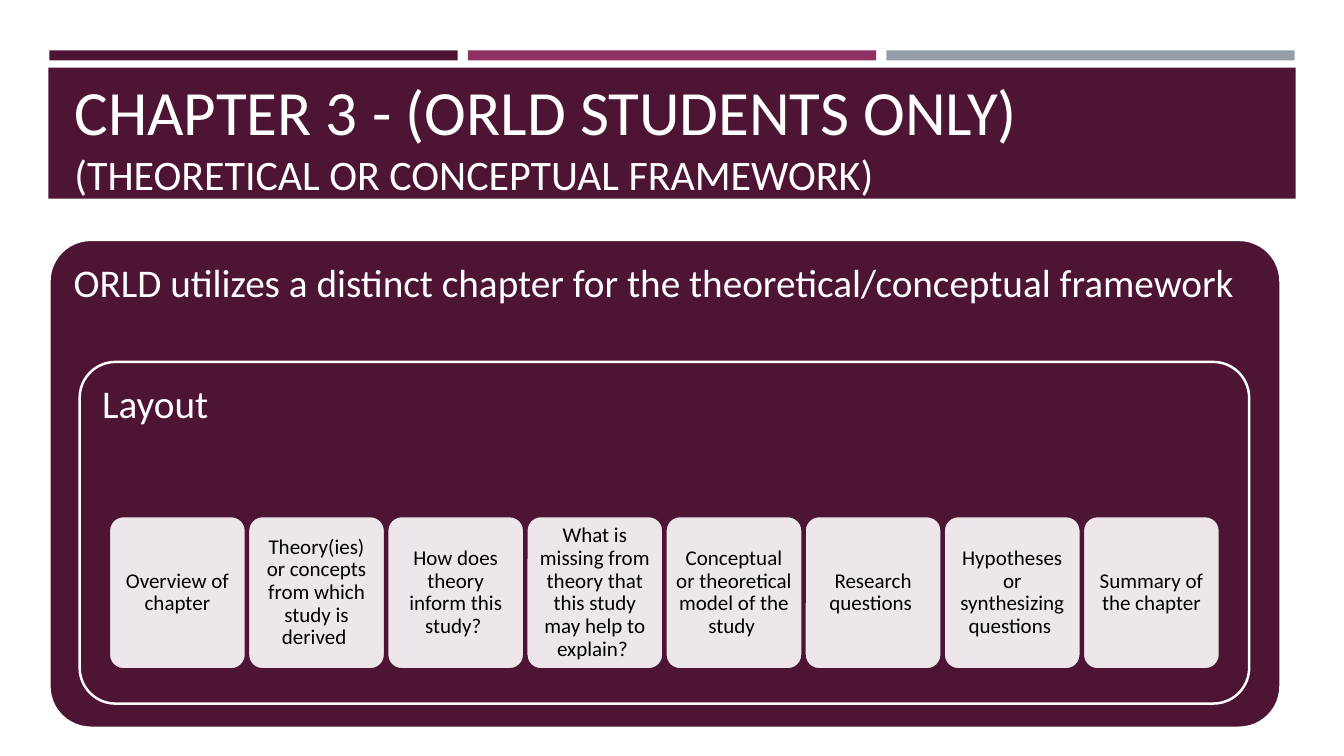
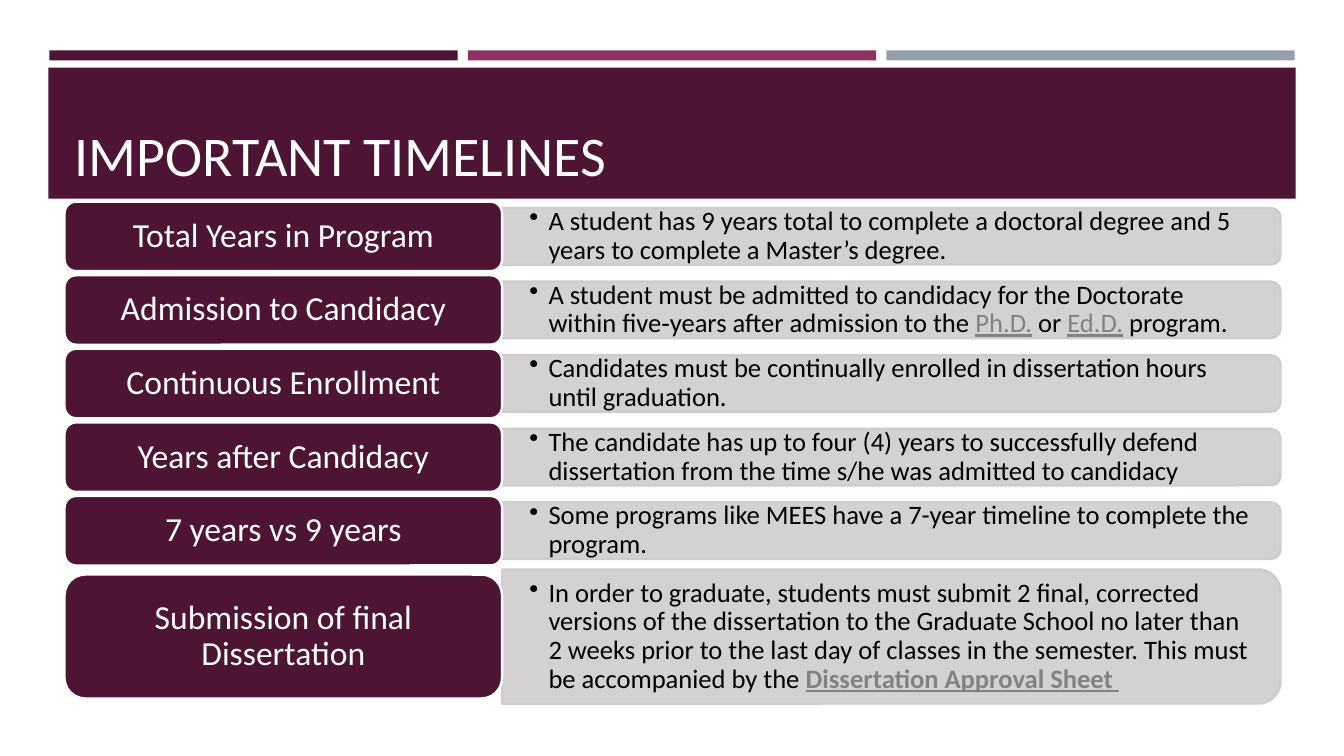
from lxml.etree import SubElement
from pptx import Presentation
from pptx.dml.color import RGBColor
from pptx.enum.shapes import MSO_SHAPE
from pptx.enum.text import MSO_ANCHOR, PP_ALIGN
from pptx.oxml.ns import qn
from pptx.util import Inches, Pt

PLUM = RGBColor(0x4D, 0x14, 0x34)
MAGENTA = RGBColor(0x90, 0x31, 0x63)
SLATE = RGBColor(0x96, 0x9F, 0xA7)
STRIP_GRAY = RGBColor(0xD0, 0xCC, 0xCE)
LINK_GRAY = RGBColor(0x82, 0x82, 0x82)
WHITE = RGBColor(0xFF, 0xFF, 0xFF)
BLACK = RGBColor(0x00, 0x00, 0x00)

LINK = {"color": LINK_GRAY, "underline": True}
BOLD_LINK = {**LINK, "bold": True}

LAYOUT_PARTS = [
    "Overview of chapter",
    "Theory(ies) or concepts from which study is derived ",
    "How does theory inform this study? ",
    "What is missing from theory that this study may help to explain? ",
    "Conceptual or theoretical model of the study ",
    "Research questions ",
    "Hypotheses or synthesizing questions ",
    "Summary of the chapter",
]

TIMELINES = [
    ("Total Years in Program", 0.69, 0.56, [
        ("A student has 9 years total to complete a doctoral degree and 5 years "
         "to complete a Master’s degree.", {})]),
    ("Admission to Candidacy", 0.69, 0.56, [
        ("A student must be admitted to candidacy for the Doctorate within "
         "five‐years after admission to the ", {}),
        ("Ph.D.", LINK), (" or ", {}), ("Ed.D.", LINK), (" program.", {})]),
    ("Continuous Enrollment", 0.69, 0.56, [
        ("Candidates must be continually enrolled in dissertation hours until "
         "graduation.", {})]),
    ("Years after Candidacy", 0.69, 0.56, [
        ("The candidate has up to four (4) years to successfully defend "
         "dissertation from the time s/he was admitted to candidacy", {})]),
    ("7 years vs 9 years", 0.69, 0.56, [
        ("Some programs like MEES have a 7-year timeline to complete the "
         "program.", {})]),
    ("Submission of final Dissertation", 1.23, 1.33, [
        ("In order to graduate, students must submit 2 final, corrected versions "
         "of the dissertation to the Graduate School no later than 2 weeks prior "
         "to the last day of classes in the semester. This must be accompanied "
         "by the ", {}),
        ("Dissertation Approval Sheet ", BOLD_LINK)]),
]


class Deck:
    """Holds the presentation, its style and the slide being built."""

    font_name = "Calibri"
    line_width = Pt(1.75)

    def __init__(self):
        self.presentation = Presentation()
        self.presentation.slide_width = Inches(13.33)
        self.presentation.slide_height = Inches(7.5)
        self.slide = None

    def start_slide(self, *title_lines):
        layout = self.presentation.slide_layouts[6]
        self.slide = self.presentation.slides.add_slide(layout)
        for index, color in enumerate((PLUM, MAGENTA, SLATE)):
            self.shape(MSO_SHAPE.RECTANGLE, (0.49 + 4.15 * index, 0.5, 4.05, 0.1), color)
        self.shape(MSO_SHAPE.RECTANGLE, (0.48, 0.67, 12.37, 1.3), PLUM)
        bottom = 1.88 if len(title_lines) == 1 else 1.99
        frame = self.text_box((0.64, 0.77, 12.06, bottom - 0.77))
        self.format_frame(frame, MSO_ANCHOR.BOTTOM, 0.1, 0.02)
        paragraph = frame.paragraphs[0]
        for index, (text, size) in enumerate(title_lines):
            if index:
                paragraph.add_line_break()
            self.run(paragraph, text, size, WHITE)

    def shape(self, kind, box, fill, line=None, corner=None, opacity=100):
        shape = self.slide.shapes.add_shape(kind, *map(Inches, box))
        shape.shadow.inherit = False
        shape.fill.solid()
        shape.fill.fore_color.rgb = fill
        if opacity < 100:
            color = shape.element.spPr.find(qn("a:solidFill")).find(qn("a:srgbClr"))
            SubElement(color, qn("a:alpha"), val=str(opacity * 1000))
        if line is None:
            shape.line.fill.background()
        else:
            shape.line.color.rgb = line
            shape.line.width = self.line_width
        if corner is not None:
            shape.adjustments[0] = corner
        return shape

    def text_box(self, box):
        return self.slide.shapes.add_textbox(*map(Inches, box)).text_frame

    def format_frame(self, frame, anchor, side, edge):
        values = {
            "word_wrap": True,
            "vertical_anchor": anchor,
            "margin_left": Inches(side),
            "margin_right": Inches(side),
            "margin_top": Inches(edge),
            "margin_bottom": Inches(edge),
        }
        for name, value in values.items():
            setattr(frame, name, value)

    def run(self, paragraph, text, size, color, bold=False, underline=False):
        run = paragraph.add_run()
        run.text = text
        values = {"name": self.font_name, "size": Pt(size), "bold": bold, "underline": underline}
        for name, value in values.items():
            setattr(run.font, name, value)
        run.font.color.rgb = color

    def fill_text(self, frame, text, size, color, alignment):
        paragraph = frame.paragraphs[0]
        paragraph.alignment = alignment
        paragraph.line_spacing = 0.9
        self.run(paragraph, text, size, color)

    def panel(self, box, text, corner):
        shape = self.shape(MSO_SHAPE.ROUNDED_RECTANGLE, box, PLUM, WHITE, corner)
        self.format_frame(shape.text_frame, MSO_ANCHOR.TOP, 0.12, 0.12)
        self.fill_text(shape.text_frame, text, 28, WHITE, PP_ALIGN.LEFT)

    def card(self, box, text):
        shape = self.shape(MSO_SHAPE.ROUNDED_RECTANGLE, box, WHITE, PLUM, 0.105, 90)
        self.format_frame(shape.text_frame, MSO_ANCHOR.MIDDLE, 0.06, 0.06)
        self.fill_text(shape.text_frame, text, 15, BLACK, PP_ALIGN.CENTER)

    def label(self, box, text):
        shape = self.shape(MSO_SHAPE.ROUNDED_RECTANGLE, box, PLUM, WHITE)
        self.format_frame(shape.text_frame, MSO_ANCHOR.MIDDLE, 0.1, 0.05)
        self.fill_text(shape.text_frame, text, 24, WHITE, PP_ALIGN.CENTER)

    def strip(self, left, top, width, height):
        shift = (width - height) / 2
        box = (left + shift, top - shift, height, width)
        shape = self.shape(MSO_SHAPE.ROUND_2_SAME_RECTANGLE, box, STRIP_GRAY, STRIP_GRAY, opacity=90)
        shape.rotation = 90

    def bullet(self, box, runs):
        frame = self.text_box(box)
        self.format_frame(frame, MSO_ANCHOR.MIDDLE, 0.27, 0)
        paragraph = frame.paragraphs[0]
        paragraph.line_spacing = 0.9
        properties = paragraph._p.get_or_add_pPr()
        properties.set("marL", str(Inches(0.19)))
        properties.set("indent", str(-Inches(0.19)))
        SubElement(properties, qn("a:buChar"), char="•")
        for text, values in runs:
            self.run(paragraph, text, 19, **{"color": BLACK, **values})


def build_framework(deck):
    deck.start_slide(("CHAPTER 3 - (ORLD STUDENTS ONLY)", 45),
                     ("(THEORETICAL OR CONCEPTUAL FRAMEWORK)", 30))
    deck.panel((0.49, 2.38, 12.21, 4.84),
               "ORLD utilizes a distinct chapter for the theoretical/conceptual framework", 0.085)
    deck.panel((0.79, 3.59, 11.6, 3.39), "Layout", 0.105)
    for index, text in enumerate(LAYOUT_PARTS):
        deck.card((1.08 + 1.38 * index, 5.12, 1.36, 1.52), text)


def build_timelines(deck):
    deck.start_slide(("IMPORTANT TIMELINES", 40))
    top = 2
    for name, label_height, strip_height, runs in TIMELINES:
        row_height = max(label_height, strip_height)
        middle = top + row_height / 2
        deck.strip(4.98, middle - strip_height / 2, 7.72, strip_height)
        deck.bullet((4.98, top, 7.69, row_height), runs)
        deck.label((0.64, middle - label_height / 2, 4.34, label_height), name)
        top += row_height + 0.04


def main():
    deck = Deck()
    build_framework(deck)
    build_timelines(deck)
    deck.presentation.save("out.pptx")


if __name__ == "__main__":
    main()
